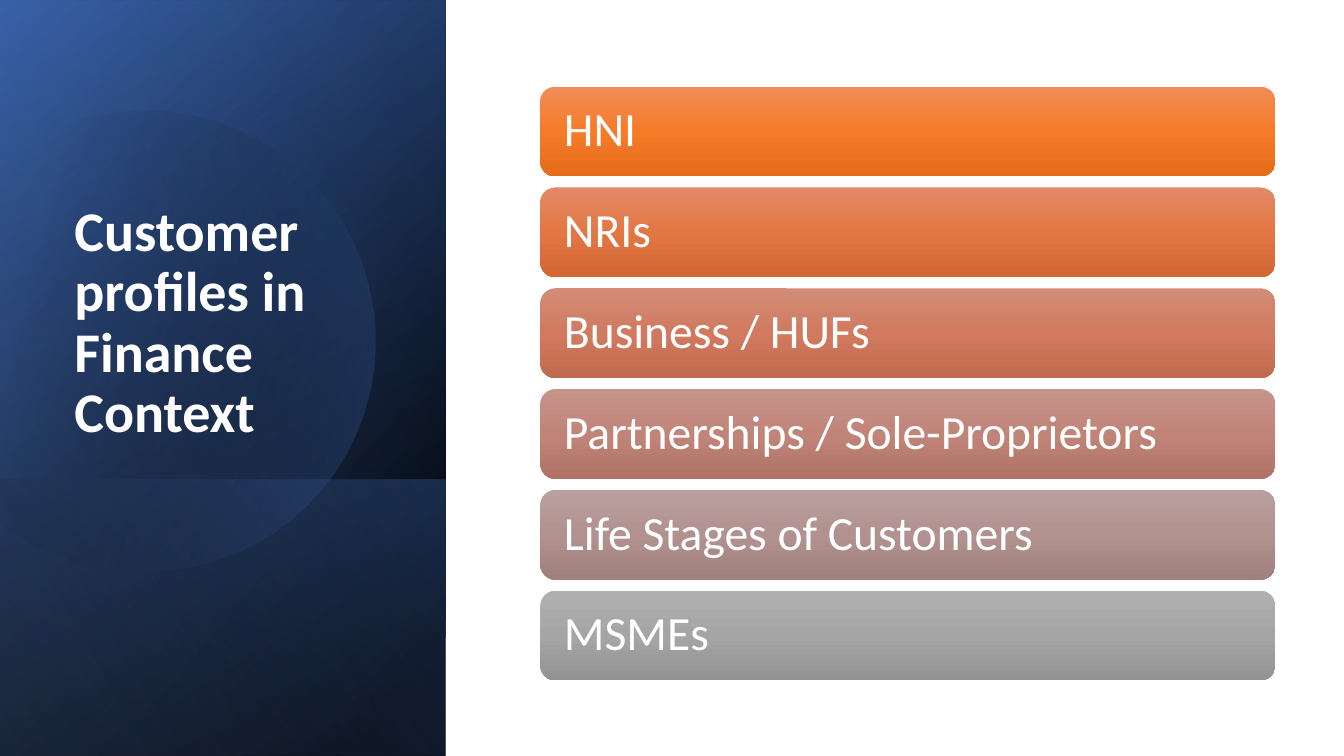
from dataclasses import dataclass
from math import cos, radians, sin

from pptx import Presentation
from pptx.dml.color import RGBColor
from pptx.enum.shapes import MSO_SHAPE
from pptx.enum.text import MSO_ANCHOR, PP_ALIGN
from pptx.oxml import parse_xml
from pptx.oxml.ns import nsdecls, qn
from pptx.util import Inches, Pt

FONT = "Calibri"
COLOURS = {
    "white": "FFFFFF",
    "black": "000000",
    "navy": "2F5597",
    "blue": "4472C4",
    "pale_blue": "8FAADC",
}


@dataclass(frozen=True)
class Stop:
    position: int
    colour: str
    alpha: int = 100


@dataclass(frozen=True)
class Panel:
    left: float
    top: float
    width: float
    angle: int
    stops: tuple[Stop, ...]


@dataclass(frozen=True)
class Bar:
    label: str
    light: str
    middle: str
    dark: str


BLACK, BLUE = COLOURS["black"], COLOURS["blue"]
PANEL_HEIGHT = 4.42
BASE_PANELS = (
    Panel(-1.54, 1.54, 7.5, 50, (Stop(8, BLACK), Stop(100, COLOURS["navy"]))),
    Panel(-1.54, 1.55, 7.5, 30, (Stop(0, BLACK, 0), Stop(99, BLUE, 46))),
    Panel(0.84, 3.92, 2.74, 130, (Stop(2, BLUE, 29), Stop(100, BLACK, 30))),
)
TOP_PANEL = Panel(-1.54, 1.54, 7.5, 120,
                  (Stop(0, BLACK, 0), Stop(99, COLOURS["pale_blue"], 11)))

# Disc outline: each curve is two control points and an end point
DISC_TILT = 343.9
DISC_CENTRE = (1.58, 3.34)
DISC_START = (1.49, 1.1)
DISC_RIGHT = (
    ((2.46, 1.12), (3.35, 1.77), (3.63, 2.75)),
    ((3.98, 3.97), (3.28, 5.23), (2.07, 5.58)),
    ((1.31, 5.8), (0.53, 5.61), (-0.03, 5.14)),
)
DISC_EDGE = ((-0.15, 5.03), (-0.15, 1.75), (0, 1.61))
DISC_LEFT = (
    ((0.23, 1.42), (0.5, 1.28), (0.8, 1.19)),
    ((1.03, 1.13), (1.26, 1.1), DISC_START),
)
CURVE_STEPS = 16

BAR_LEFT, BAR_TOP, BAR_WIDTH, BAR_HEIGHT, BAR_PITCH = 5.36, 0.86, 7.29, 0.89, 1.0
BARS = (
    Bar("HNI", "F18C57", "F67B28", "E56C19"),
    Bar("NRIs", "E18A66", "E37744", "D26734"),
    Bar("Business / HUFs", "D28C78", "D17A5F", "C06A4E"),
    Bar("Partnerships / Sole-Proprietors", "C5948B", "C18478", "AF7267"),
    Bar("Life Stages of Customers", "B9A09D", "B2928F", "A0807D"),
    Bar("MSMEs", "AFAFAF", "A5A5A5", "939393"),
)


def paint(shape, stops: tuple[Stop, ...], angle: int) -> None:
    """Give a shape a linear gradient, no line and no shadow."""
    shape.shadow.inherit = False
    shape.line.fill.background()
    shape.fill.gradient()
    stop_xml = "".join(
        f'<a:gs pos="{stop.position * 1000}"><a:srgbClr val="{stop.colour}">'
        f'<a:alpha val="{stop.alpha * 1000}"/></a:srgbClr></a:gs>'
        for stop in stops
    )
    gradient = parse_xml(
        f'<a:gradFill {nsdecls("a")} rotWithShape="1"><a:gsLst>{stop_xml}</a:gsLst>'
        f'<a:lin ang="{angle * 60000}" scaled="0"/></a:gradFill>'
    )
    properties = shape.element.spPr
    properties.replace(properties.find(qn("a:gradFill")), gradient)


def write(shape, text: str, size: int, anchor: MSO_ANCHOR, bold: bool = False) -> None:
    frame = shape.text_frame
    frame.text = text
    frame.word_wrap = True
    frame.vertical_anchor = anchor
    para = frame.paragraphs[0]
    para.alignment = PP_ALIGN.LEFT
    para.line_spacing = 0.9
    font = para.runs[0].font
    font.name, font.size, font.bold = FONT, Pt(size), bold
    font.color.rgb = RGBColor.from_string(COLOURS["white"])


def add_panel(page, panel: Panel) -> None:
    shape = page.shapes.add_shape(
        MSO_SHAPE.RECTANGLE, Inches(panel.left), Inches(panel.top),
        Inches(panel.width), Inches(PANEL_HEIGHT))
    shape.rotation = 90
    shape.element.spPr.xfrm.set("flipH", "1")
    paint(shape, panel.stops, panel.angle)


def sample_curves(start: tuple, curves: tuple) -> list[tuple]:
    """Return points along a chain of cubic curves."""
    points = []
    for first, second, end in curves:
        for step in range(1, CURVE_STEPS + 1):
            t = step / CURVE_STEPS
            u = 1 - t
            points.append(tuple(
                u**3 * a + 3 * u * u * t * b + 3 * u * t * t * c + t**3 * d
                for a, b, c, d in zip(start, first, second, end)))
        start = end
    return points


def untilt(point: tuple) -> tuple:
    """Turn a point back, so that the shape's rotation restores it."""
    turn = radians(-DISC_TILT)
    x, y = point[0] - DISC_CENTRE[0], point[1] - DISC_CENTRE[1]
    return (Inches(DISC_CENTRE[0] + x * cos(turn) - y * sin(turn)),
            Inches(DISC_CENTRE[1] + x * sin(turn) + y * cos(turn)))


def add_disc(page) -> None:
    outline = [DISC_START, *sample_curves(DISC_START, DISC_RIGHT), *DISC_EDGE,
               *sample_curves(DISC_EDGE[-1], DISC_LEFT)]
    points = [untilt(point) for point in outline]
    builder = page.shapes.build_freeform(*points[0])
    builder.add_line_segments(points[1:], close=True)
    disc = builder.convert_to_shape()
    disc.rotation = DISC_TILT
    paint(disc, (Stop(29, BLACK, 0), Stop(100, BLUE, 43)), 30)


def add_bar(page, bar: Bar, row: int) -> None:
    shape = page.shapes.add_shape(
        MSO_SHAPE.ROUNDED_RECTANGLE, Inches(BAR_LEFT),
        Inches(BAR_TOP + row * BAR_PITCH), Inches(BAR_WIDTH), Inches(BAR_HEIGHT))
    paint(shape, (Stop(0, bar.light), Stop(50, bar.middle), Stop(100, bar.dark)), 90)
    write(shape, bar.label, 34, MSO_ANCHOR.MIDDLE)
    shape.text_frame.margin_left = shape.text_frame.margin_right = Inches(0.19)


def main() -> None:
    deck = Presentation()
    deck.slide_width, deck.slide_height = Inches(13.33), Inches(7.5)
    page = deck.slides.add_slide(deck.slide_layouts[6])

    # Layered blue side panel
    for panel in BASE_PANELS:
        add_panel(page, panel)
    add_disc(page)
    add_panel(page, TOP_PANEL)

    # Title
    box = page.shapes.add_textbox(Inches(0.64), Inches(1.84), Inches(3.41), Inches(2.62))
    write(box, "Customer profiles in Finance Context", 40, MSO_ANCHOR.BOTTOM, bold=True)

    # Customer profile bars
    for row, bar in enumerate(BARS):
        add_bar(page, bar, row)

    deck.save("out.pptx")


if __name__ == "__main__":
    main()
